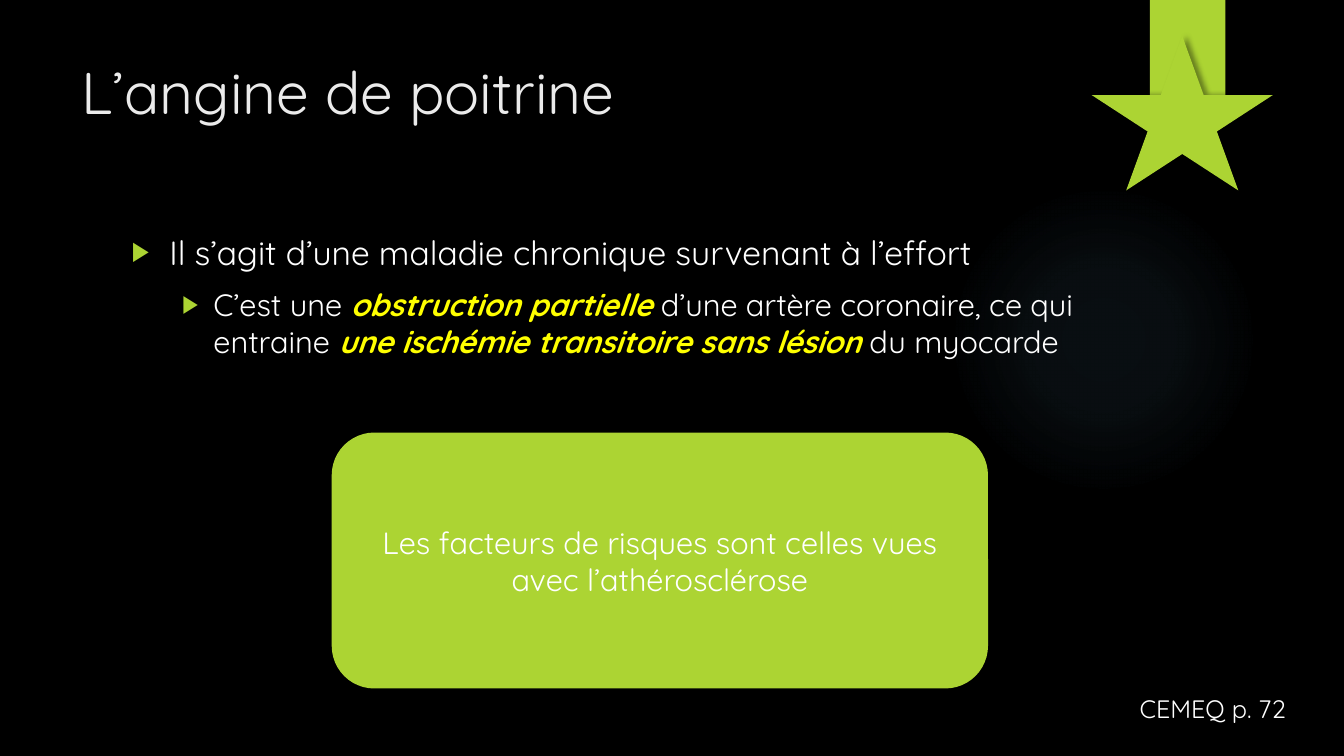
from pptx import Presentation
from pptx.dml.color import RGBColor
from pptx.enum.shapes import MSO_SHAPE as Kind
from pptx.enum.text import MSO_ANCHOR as Anchor, PP_ALIGN as Align
from pptx.oxml import parse_xml
from pptx.oxml.ns import nsdecls
from pptx.util import Cm, Pt

FONT = "Quicksand"
LIME, WHITE, PALE = "ACD433", "FFFFFF", "EBEBEB"
YELLOW, BLACK, SKY = "FFFF00", "000000", "7AC4F0"
STRONG = {"bold": True, "italic": True}


def color(code):
    return RGBColor.from_string(code)


def node(tag, attrs="", inner=""):
    return parse_xml(f'<a:{tag} {nsdecls("a")} {attrs}>{inner}</a:{tag}>')


def tint(code, alpha):
    return f'<a:srgbClr val="{code}"><a:alpha val="{alpha * 1000}"/></a:srgbClr>'


def write(para, text, size, code=WHITE, extra={}):
    run = para.add_run()
    run.text = text
    style = {"name": FONT, "size": Pt(size), "bold": False, "italic": False}
    for key, value in (style | extra).items():
        setattr(run.font, key, value)
    run.font.color.rgb = color(code)


def place(slide, kind, box, code):
    shape = slide.shapes.add_shape(kind, *map(Cm, box))
    shape.shadow.inherit = False
    shape.fill.solid()
    shape.fill.fore_color.rgb = color(code)
    shape.line.fill.background()
    return shape


def shade(shape, alpha, blur, dist, angle):
    attrs = (f'blurRad="{Pt(blur)}" dist="{Pt(dist)}" '
             f'dir="{angle * 60000}" rotWithShape="0"')
    effects = shape._element.spPr.find("{*}effectLst")
    effects.append(node("outerShdw", attrs, tint(BLACK, alpha)))


def add_box(slide, box):
    frame = slide.shapes.add_textbox(*map(Cm, box)).text_frame
    frame.word_wrap = True
    return frame


def add_glow(slide, box):
    shape = place(slide, Kind.OVAL, box, SKY)
    stops = "".join(f'<a:gs pos="{pos * 1000}">{tint(SKY, alpha)}</a:gs>'
                    for pos, alpha in [(0, 7), (36, 6), (69, 0)])
    focus = '<a:fillToRect l="50000" t="50000" r="50000" b="50000"/>'
    grad = node("gradFill", 'rotWithShape="1"',
                f'<a:gsLst>{stops}</a:gsLst><a:path path="circle">{focus}</a:path>')
    props = shape._element.spPr
    props.replace(props.find("{*}solidFill"), grad)


def add_medal(slide, box):
    left, top, width, height = box
    band, drop = 1.9, 0.91
    ribbon = place(slide, Kind.RECTANGLE, (left + 1.47, top, band, 3.17), LIME)
    shade(ribbon, 45, 3, 2, 90)
    star = place(slide, Kind.STAR_5_POINT,
                 (left, top + drop, width, height - drop), LIME)
    shade(star, 40, 4, 3, 0)


def add_title(slide, box, text):
    title = slide.shapes.title
    for key, value in zip(("left", "top", "width", "height"), box):
        setattr(title, key, Cm(value))
    frame = title.text_frame
    frame.vertical_anchor = Anchor.TOP
    frame.word_wrap = True
    para = frame.paragraphs[0]
    para.alignment = Align.LEFT
    write(para, text, 42, PALE)


def add_points(slide, box, points):
    frame = add_box(slide, box)
    for index, (size, margin, hang, runs) in enumerate(points):
        para = frame.add_paragraph() if index else frame.paragraphs[0]
        para.level = index
        if index:
            para.space_before = Pt(10)
        props = para._p.get_or_add_pPr()
        props.set("marL", str(Cm(margin)))
        props.set("indent", str(-Cm(hang)))
        for part in (node("buClr", "", f'<a:srgbClr val="{LIME}"/>'),
                     node("buSzPct", 'val="80000"'),
                     node("buFont", 'typeface="Arial"'),
                     node("buChar", 'char="▶"')):
            props.append(part)
        for text, strong in runs:
            write(para, text, size, YELLOW if strong else WHITE,
                  STRONG if strong else {})


def add_card(slide, box, text):
    card = place(slide, Kind.ROUNDED_RECTANGLE, box, LIME)
    shade(card, 20, 6, 1, 45)
    frame = card.text_frame
    frame.word_wrap = True
    frame.vertical_anchor = Anchor.MIDDLE
    para = frame.paragraphs[0]
    para.alignment = Align.CENTER
    write(para, text, 22)


def add_note(slide, box, text):
    write(add_box(slide, box).paragraphs[0], text, 18)


def main():
    deck = Presentation()
    deck.slide_width, deck.slide_height = Cm(33.87), Cm(19.05)
    slide = deck.slides.add_slide(deck.slide_layouts[5])
    slide.background.fill.solid()
    slide.background.fill.fore_color.rgb = color(BLACK)
    add_glow(slide, (23.9, 4.65, 7.82, 7.82))
    add_title(slide, (1.8, 1.27, 26.14, 3.89), "L’angine de poitrine")
    add_points(slide, (3.07, 5.71, 24.84, 4.57), [
        (24, 0.95, 0.95,
         [("Il s’agit d’une maladie chronique survenant à l’effort", False)]),
        (22, 2.06, 0.79,
         [("C’est une ", False),
          ("obstruction partielle ", True),
          ("d’une artère coronaire, ce qui entraine ", False),
          ("une ischémie transitoire sans lésion ", True),
          ("du myocarde", False)]),
    ])
    add_note(slide, (28.47, 17.35, 4.7, 1.02), "CEMEQ p. 72")
    add_medal(slide, (27.51, 0, 4.57, 4.8))
    add_card(slide, (8.36, 10.9, 16.54, 6.45),
             "Les facteurs de risques sont celles vues avec l’athérosclérose")
    deck.save("out.pptx")


if __name__ == "__main__":
    main()
